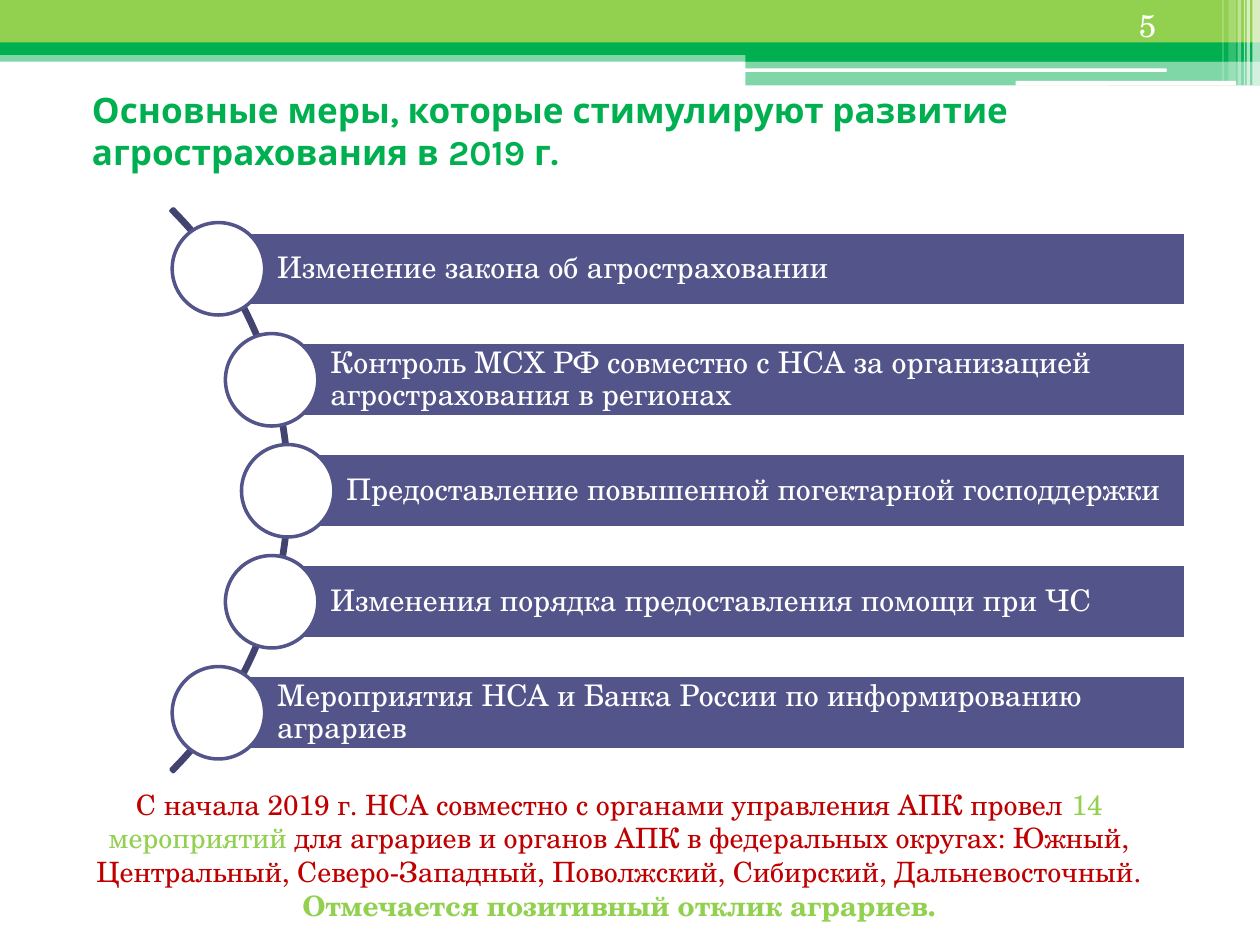
from dataclasses import dataclass
from typing import NamedTuple, Optional

from lxml.etree import SubElement
from pptx import Presentation
from pptx.dml.color import RGBColor
from pptx.enum.shapes import MSO_SHAPE
from pptx.enum.text import MSO_ANCHOR, PP_ALIGN
from pptx.oxml.ns import qn
from pptx.util import Pt


@dataclass(frozen=True)
class Theme:
    lime: str = "92D050"
    green: str = "00B050"
    white: str = "FFFFFF"
    slate: str = "53548A"
    dark: str = "42436F"
    red: str = "C00000"
    serif: str = "TeX Gyre Schola"
    sans: str = "Karla"
    title: int = 20
    page: int = 18
    step: int = 17
    note: int = 16


class Box(NamedTuple):
    left: float
    top: float
    width: float
    height: float


class Band(NamedTuple):
    box: Box
    color: str
    alpha: int = 100
    kind: MSO_SHAPE = MSO_SHAPE.RECTANGLE


class Run(NamedTuple):
    text: str
    color: str
    bold: bool = False


class Step(NamedTuple):
    text: str
    center: float


THEME = Theme()
ROUND = MSO_SHAPE.ROUNDED_RECTANGLE
HALF = 293.8

BANDS = [
    Band(Box(0, 28.8, 720, 6.5), THEME.green, 50),
    Band(Box(0, 0, 720, 24.5), THEME.lime),
    Band(Box(0, 24.2, 720, 7.2), THEME.green),
    Band(Box(426, HALF - 265.8, 294, 7.2), THEME.green),
    Band(Box(426, 34.8, 294, 14), THEME.green, 50),
    Band(Box(425.5, 39.1, 241.2, 2), THEME.white, kind=ROUND),
    Band(Box(580.3, 46.3, 126, 2.6), THEME.white, kind=ROUND),
] + [
    Band(Box(left, 0, width, height), THEME.white, alpha)
    for left, width, height, alpha in [
        (715.7, 4.3, 48.8, 65),
        (712.3, 2, 48.8, 65),
        (710.8, 0.7, 48.8, 60),
        (707.2, 2, 48.8, 40),
        (702, 4.3, 46.2, 20),
        (698.5, 0.7, 46.2, 30),
    ]
]

STEPS = [
    Step("Изменение закона об агростраховании", 124.8),
    Step("Контроль МСХ РФ совместно с НСА за организацией агрострахования в регионах", 155.2),
    Step("Предоставление повышенной погектарной господдержки", 164.4),
    Step("Изменения порядка предоставления помощи при ЧС", 155.2),
    Step("Мероприятия НСА и Банка России по информированию аграриев", 124.8),
]
FIRST, PITCH = 153.6, 63.42
RIGHT, TALL, DISC = 677.7, 42.3, 52.8


def draw(slide, kind: MSO_SHAPE, box: Box, fill: Optional[str] = None,
         line: Optional[str] = None, alpha: int = 100):
    shape = slide.shapes.add_shape(kind, *map(Pt, box))
    shape.shadow.inherit = False
    if fill:
        shape.fill.solid()
        shape.fill.fore_color.rgb = RGBColor.from_string(fill)
        if alpha < 100:
            color = shape.fill._xPr.find(qn("a:solidFill"))[0]
            SubElement(color, qn("a:alpha"), val=str(alpha * 1000))
    else:
        shape.fill.background()
    if line:
        shape.line.color.rgb = RGBColor.from_string(line)
        shape.line.width = Pt(2)
    else:
        shape.line.fill.background()
    return shape


def write(shape, lines: list[list[Run]], *, size: int, font: str = THEME.serif,
          align: PP_ALIGN = PP_ALIGN.LEFT, anchor: MSO_ANCHOR = MSO_ANCHOR.TOP,
          inset: Optional[tuple] = None, spacing: Optional[float] = None) -> None:
    frame = shape.text_frame
    frame.word_wrap = True
    frame.vertical_anchor = anchor
    if inset:
        frame.margin_left, frame.margin_top, frame.margin_right, frame.margin_bottom = map(Pt, inset)
    for index, runs in enumerate(lines):
        para = frame.add_paragraph() if index else frame.paragraphs[0]
        para.alignment = align
        if spacing:
            para.line_spacing = spacing
        for item in runs:
            run = para.add_run()
            run.text = item.text
            run.font.name = font
            run.font.size = Pt(size)
            run.font.bold = item.bold
            run.font.color.rgb = RGBColor.from_string(item.color)


def label(slide, box: Box, lines: list[list[Run]], **style) -> None:
    write(slide.shapes.add_textbox(*map(Pt, box)), lines, **style)


def draw_step(slide, step: Step, middle: float) -> None:
    bar = draw(slide, MSO_SHAPE.RECTANGLE,
               Box(step.center, middle - TALL / 2, RIGHT - step.center, TALL),
               THEME.slate, THEME.white)
    write(bar, [[Run(step.text, THEME.white)]], size=THEME.step,
          anchor=MSO_ANCHOR.MIDDLE, inset=(33.6, 3.4, 3.4, 3.4), spacing=0.9)
    draw(slide, MSO_SHAPE.OVAL,
         Box(step.center - DISC / 2, middle - DISC / 2, DISC, DISC),
         THEME.white, THEME.slate)


def main() -> None:
    deck = Presentation()
    deck.slide_width, deck.slide_height = Pt(720), Pt(540)
    slide = deck.slides.add_slide(deck.slide_layouts[6])

    for band in BANDS:
        draw(slide, band.kind, band.box, band.color, alpha=band.alpha)

    label(slide, Box(45.4, 49, 646.6, 51.1),
          [[Run("Основные меры, которые стимулируют развитие агрострахования в 2019 г.", THEME.green, True)]],
          size=THEME.title, font=THEME.sans, anchor=MSO_ANCHOR.MIDDLE)

    arc = draw(slide, MSO_SHAPE.BLOCK_ARC, Box(-289.4, 52.6, 455, 455), line=THEME.dark)
    for index, value in enumerate((189, 27, 0.004)):
        arc.adjustments[index] = value

    for index, step in enumerate(STEPS):
        draw_step(slide, step, FIRST + index * PITCH)

    label(slide, Box(25.2, 446.4, 657.4, 85), [
        [Run("С начала 2019 г. НСА совместно с органами управления АПК провел ", THEME.red),
         Run("14 мероприятий ", THEME.lime),
         Run("для аграриев и органов АПК в федеральных округах: Южный, Центральный, "
             "Северо-Западный, Поволжский, Сибирский, Дальневосточный.", THEME.red)],
        [Run("Отмечается позитивный отклик аграриев.", THEME.lime, True)],
    ], size=THEME.note, align=PP_ALIGN.CENTER)
    label(slide, Box(643.7, 0, 59.8, 28.8), [[Run("5", THEME.white)]], size=THEME.page)

    deck.save("out.pptx")


if __name__ == "__main__":
    main()
